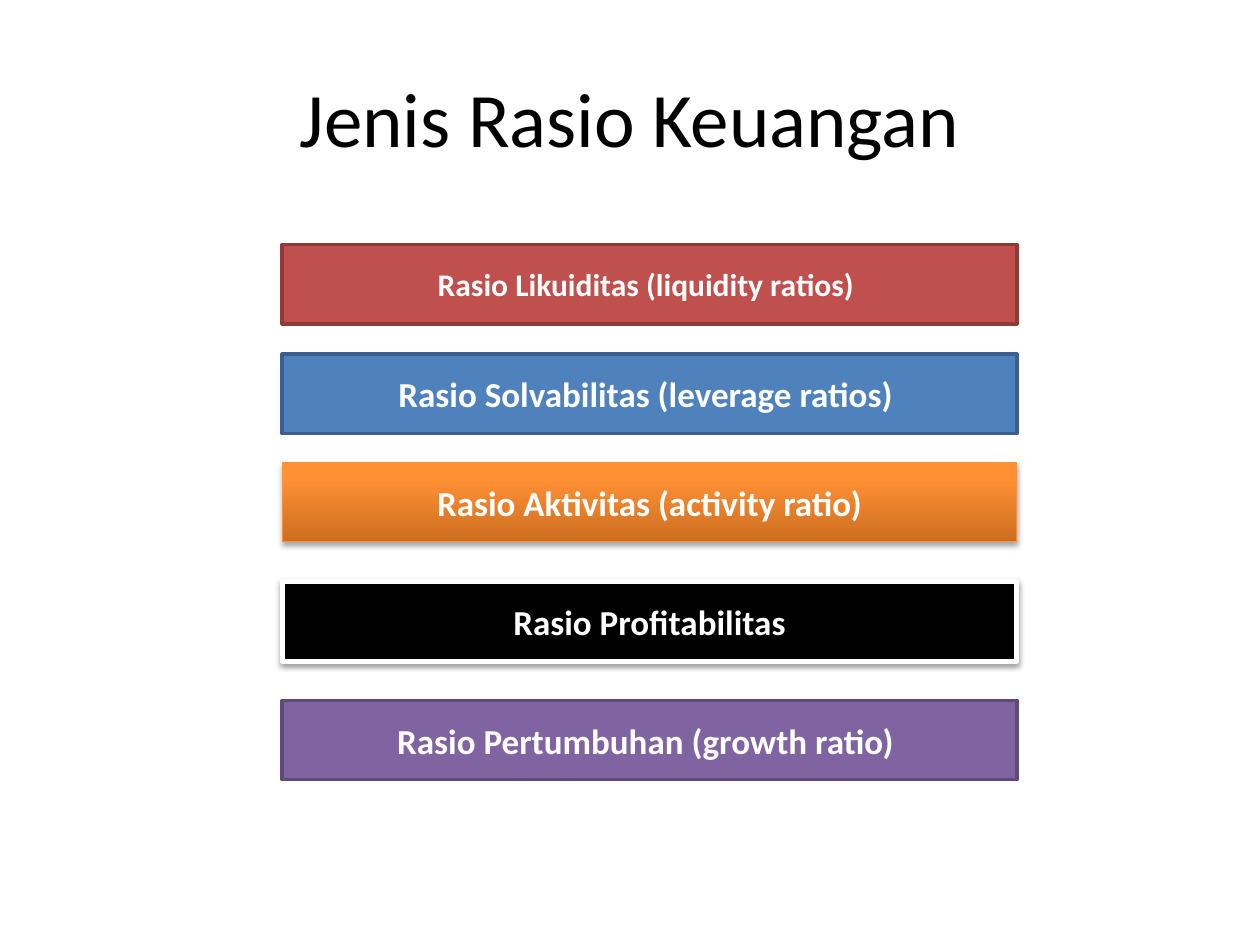
from copy import deepcopy

from lxml.etree import SubElement
from pptx import Presentation
from pptx.dml.color import RGBColor
from pptx.enum.shapes import MSO_SHAPE as Shape
from pptx.enum.text import MSO_ANCHOR as Anchor, PP_ALIGN as Align
from pptx.oxml.ns import qn
from pptx.util import Cm, Pt

BAR_LEFT, BAR_WIDTH, BAR_HEIGHT = 5.69, 14.81, 1.6
ORANGE_STOPS = [(0, "CC6E20"), (0.8, "FF9034"), (1, "FF9136")]

BARS = [
    dict(text="Rasio Likuiditas (liquidity ratios) ", top=4.93, fill="C0504D", line="8E3B39", size=18),
    dict(text="Rasio Solvabilitas (leverage ratios) ", top=7.14, fill="4F81BD", line="3A5F8C"),
    dict(text="Rasio Aktivitas (activity ratio)", top=9.32, fill=ORANGE_STOPS, line="F69240",
         line_width=0.75, shadow=(1.8, 35)),
    dict(text="Rasio Profitabilitas", top=11.73, fill="000000", line="FFFFFF",
         line_width=3, shadow=(1.6, 38)),
    dict(text="Rasio Pertumbuhan (growth ratio) ", top=14.12, fill="8064A2", line="5F4A78"),
]


def color(value):
    return RGBColor.from_string(value)


def write_text(shape, text, size, text_color, bold=False):
    frame = shape.text_frame
    frame.word_wrap = True
    frame.vertical_anchor = Anchor.MIDDLE
    para = frame.paragraphs[0]
    para.text = text
    para.alignment = Align.CENTER
    para.font.name = "Calibri"
    para.font.size = Pt(size)
    para.font.bold = bold
    para.font.color.rgb = color(text_color)


def fill_gradient(shape, stops):
    shape.fill.gradient()
    shape.fill.gradient_angle = 90
    stop_list = shape._element.spPr.find(qn("a:gradFill")).find(qn("a:gsLst"))
    stop_list.append(deepcopy(stop_list[-1]))
    for stop, (position, value) in zip(shape.fill.gradient_stops, stops):
        stop.position = position
        stop.color.rgb = color(value)


def add_shadow(shape, distance, opacity):
    effects = shape._element.spPr.find(qn("a:effectLst"))
    shadow = SubElement(effects, qn("a:outerShdw"), blurRad=str(Pt(3.1)), dist=str(Pt(distance)),
                        dir="5400000", rotWithShape="0")
    shade = SubElement(shadow, qn("a:srgbClr"), val="000000")
    SubElement(shade, qn("a:alpha"), val=str(opacity * 1000))


def add_title(slide, text):
    box = slide.shapes.add_textbox(Cm(1.27), Cm(0.76), Cm(22.86), Cm(3.18))
    write_text(box, text, 44, "000000")


def add_bar(slide, text, top, fill, line, line_width=2, size=20, shadow=None):
    bar = slide.shapes.add_shape(Shape.RECTANGLE, Cm(BAR_LEFT), Cm(top), Cm(BAR_WIDTH), Cm(BAR_HEIGHT))
    if isinstance(fill, str):
        bar.fill.solid()
        bar.fill.fore_color.rgb = color(fill)
    else:
        fill_gradient(bar, fill)
    bar.line.color.rgb = color(line)
    bar.line.width = Pt(line_width)
    bar.shadow.inherit = False
    if shadow:
        add_shadow(bar, *shadow)
    write_text(bar, text, size, "FFFFFF", bold=True)


def main():
    deck = Presentation()
    deck.slide_width, deck.slide_height = Cm(25.4), Cm(19.05)
    slide = deck.slides.add_slide(deck.slide_layouts[6])
    add_title(slide, "Jenis Rasio Keuangan")
    for bar in BARS:
        add_bar(slide, **bar)
    deck.save("out.pptx")


if __name__ == "__main__":
    main()
